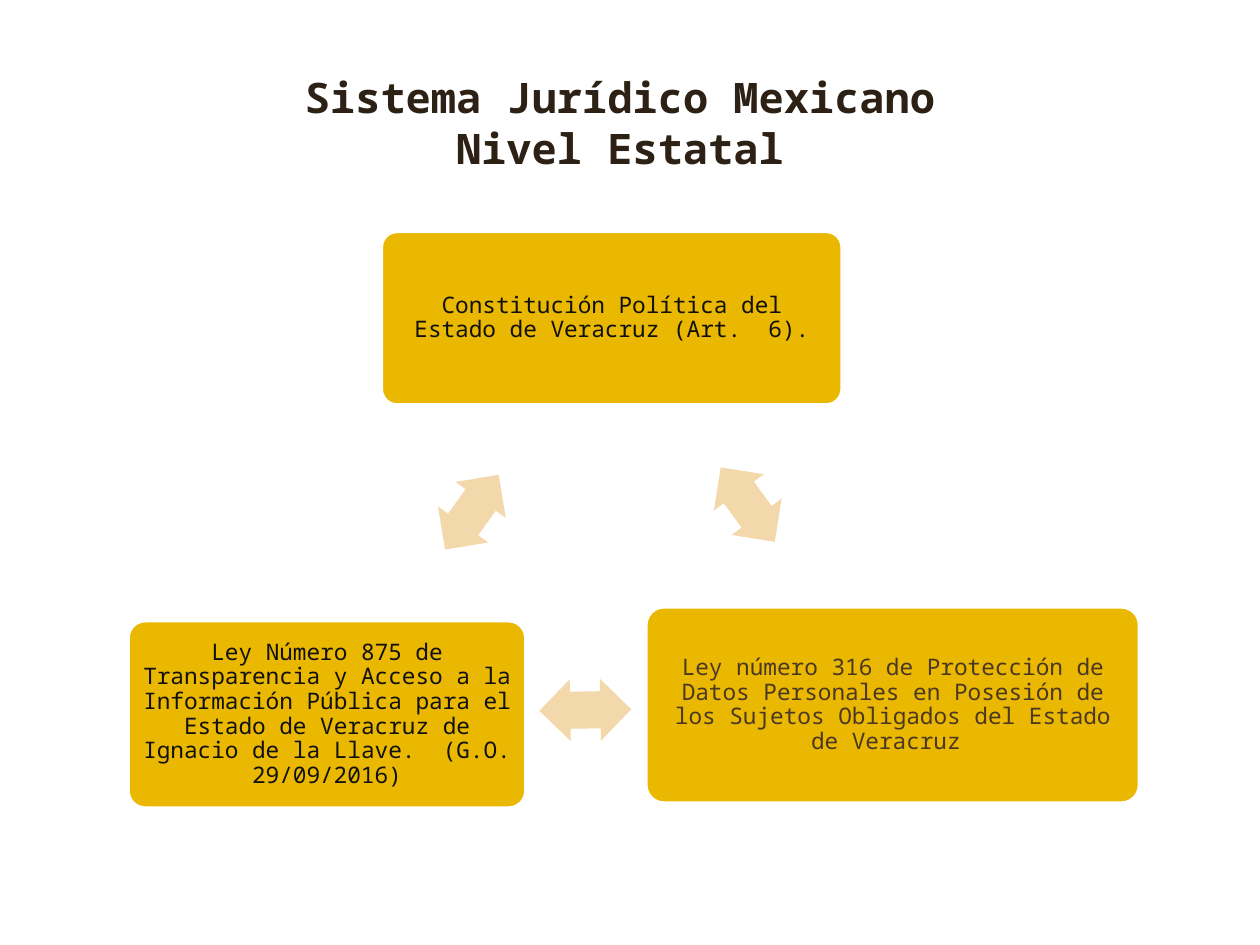
from dataclasses import dataclass

from pptx import Presentation
from pptx.dml.color import RGBColor
from pptx.enum.shapes import MSO_SHAPE
from pptx.enum.text import MSO_ANCHOR, PP_ALIGN
from pptx.util import Inches, Pt


@dataclass(frozen=True)
class Theme:
    font: str = "Noto Sans Mono"
    title_size: float = 24
    body_size: float = 13
    title_color: str = "2C2114"
    body_color: str = "111111"
    soft_color: str = "4B3822"
    box_fill: str = "EAB800"
    box_line: str = "FFFFFF"
    arrow_fill: str = "F3D8AB"


class SlideBuilder:
    """Places elements on a grid of 100 columns by 75 rows."""

    CELL = Inches(0.1)
    ARROW_SIZE = (7.3, 4.9)

    def __init__(self, slide, theme):
        self.shapes = slide.shapes
        self.theme = theme

    def grid(self, *cells):
        return [round(cell * self.CELL) for cell in cells]

    def set_text(self, para, text, size, color, bold=False):
        para.text = text
        para.alignment = PP_ALIGN.CENTER
        para.font.name = self.theme.font
        para.font.size = Pt(size)
        para.font.bold = bold
        para.font.color.rgb = RGBColor.from_string(color)

    def title(self, text, *area):
        frame = self.shapes.add_textbox(*self.grid(*area)).text_frame
        frame.word_wrap = True
        self.set_text(frame.paragraphs[0], text, self.theme.title_size,
                      self.theme.title_color, bold=True)

    def filled_shape(self, kind, area, fill):
        shape = self.shapes.add_shape(kind, *self.grid(*area))
        shape.shadow.inherit = False
        shape.fill.solid()
        shape.fill.fore_color.rgb = RGBColor.from_string(fill)
        return shape

    def law_box(self, text, area, color):
        box = self.filled_shape(MSO_SHAPE.ROUNDED_RECTANGLE, area, self.theme.box_fill)
        box.adjustments[0] = 0.1
        box.line.color.rgb = RGBColor.from_string(self.theme.box_line)
        box.line.width = Pt(4.33)
        frame = box.text_frame
        frame.word_wrap = True
        frame.vertical_anchor = MSO_ANCHOR.MIDDLE
        frame.margin_left = frame.margin_right = Inches(0.08)
        frame.margin_top = frame.margin_bottom = Inches(0.08)
        para = frame.paragraphs[0]
        self.set_text(para, text, self.theme.body_size, color)
        para.line_spacing = 0.9

    def double_arrow(self, left, top, angle):
        arrow = self.filled_shape(MSO_SHAPE.LEFT_RIGHT_ARROW,
                                  (left, top, *self.ARROW_SIZE), self.theme.arrow_fill)
        arrow.adjustments[0] = 0.6
        arrow.adjustments[1] = 0.5
        arrow.line.fill.background()
        arrow.rotation = angle


def main():
    deck = Presentation()
    deck.slide_width, deck.slide_height = Inches(10), Inches(7.5)
    theme = Theme()
    builder = SlideBuilder(deck.slides.add_slide(deck.slide_layouts[6]), theme)

    # Heading
    builder.title("Sistema Jurídico Mexicano\vNivel Estatal", 6.7, 5.2, 85, 16.1)

    # Laws: constitution above, the two state laws below
    laws = [
        ("Constitución Política del Estado de Veracruz (Art.  6).",
         (30.1, 18.2, 36.9, 14.1), theme.body_color),
        ("Ley número 316 de Protección de Datos Personales en Posesión "
         "de los Sujetos Obligados del Estado de Veracruz ",
         (51.1, 48, 39.5, 15.9), theme.soft_color),
        ("Ley Número 875 de Transparencia y Acceso a la Información Pública para "
         "el Estado de Veracruz de Ignacio de la Llave.  (G.O. 29/09/2016)",
         (10, 49.1, 31.9, 15.2), theme.body_color),
    ]
    for text, area, color in laws:
        builder.law_box(text, area, color)

    # Arrows of the cycle: right, bottom, left
    for left, top, angle in [(55.7, 37.6, 54), (42.8, 53.9, 179), (33.8, 38.2, 305.6)]:
        builder.double_arrow(left, top, angle)

    deck.save("out.pptx")


if __name__ == "__main__":
    main()
